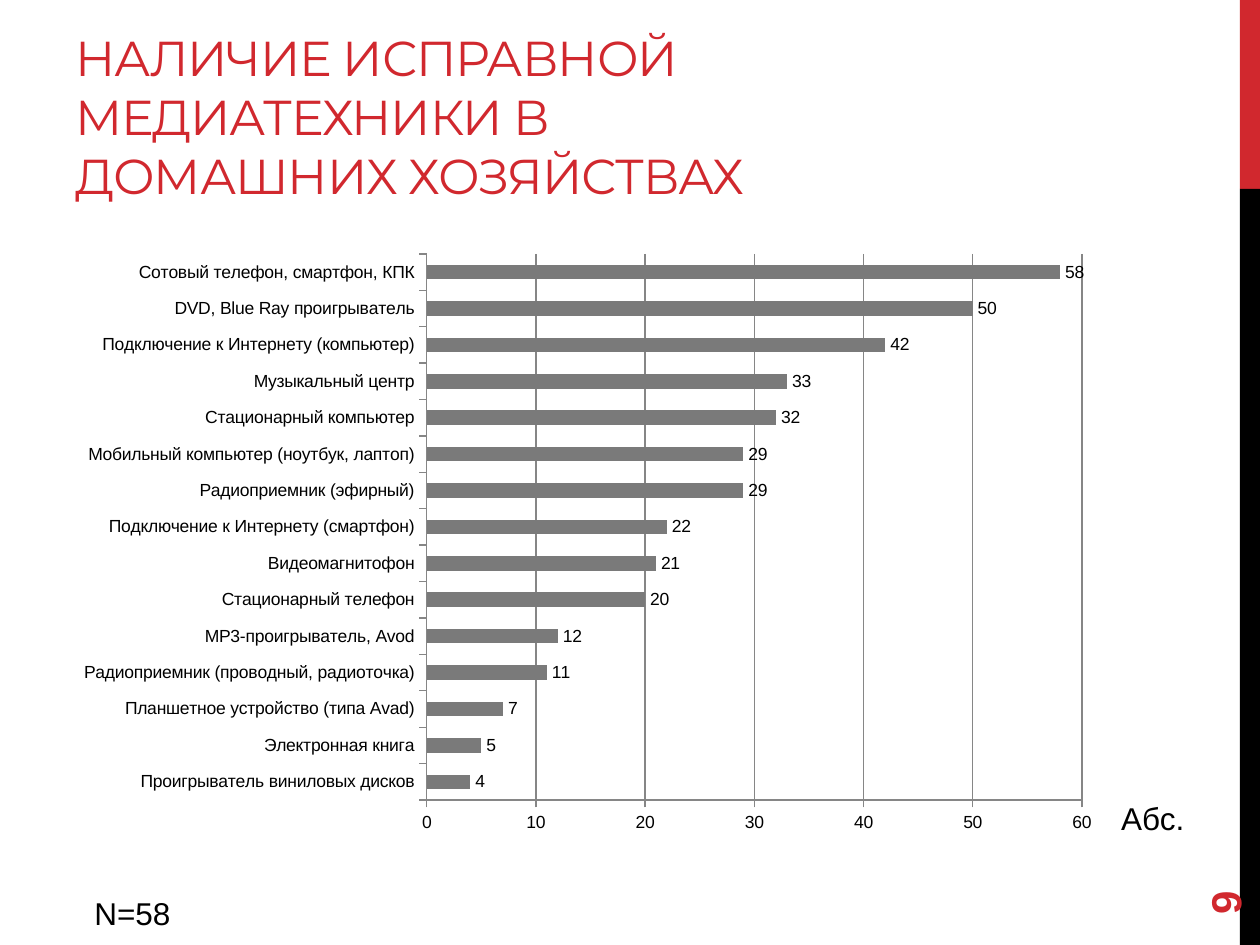
import pptx
import pptx.chart.data
import pptx.dml.color
import pptx.enum.chart
import pptx.enum.shapes
import pptx.enum.text
import pptx.util
from pptx.util import Inches

COLORS = {"red": "D1282E", "black": "000000", "bar": "7A7A7A", "grid": "868686"}


def rgb(name):
    return pptx.dml.color.RGBColor.from_string(COLORS[name])


def write(shape, text, size, color, face="Arial", bold=False):
    """Add one formatted run to the shape's first paragraph and return it."""
    paragraph = shape.text_frame.paragraphs[0]
    paragraph.alignment = pptx.enum.text.PP_ALIGN.LEFT
    run = paragraph.add_run()
    run.text = text
    run.font.size = pptx.util.Pt(size)
    run.font.name = face
    run.font.bold = bold
    run.font.color.rgb = rgb(color)
    return run


deck = pptx.Presentation()
deck.slide_width, deck.slide_height = Inches(10), Inches(7.5)
slide = deck.slides.add_slide(deck.slide_layouts[5])

# Side stripe
for top, height, color in [(0, 1.5, "red"), (1.5, 6, "black")]:
    stripe = slide.shapes.add_shape(
        pptx.enum.shapes.MSO_SHAPE.RECTANGLE,
        Inches(9.84), Inches(top), Inches(0.16), Inches(height))
    stripe.shadow.inherit = False
    stripe.fill.solid()
    stripe.fill.fore_color.rgb = rgb(color)
    stripe.line.fill.background()

# Title
title = slide.shapes.title
title.left, title.top = Inches(0.5), Inches(0.17)
title.width, title.height = Inches(6.33), Inches(1.5)
title.text_frame.word_wrap = True
title.text_frame.auto_size = pptx.enum.text.MSO_AUTO_SIZE.NONE
title.text_frame.vertical_anchor = pptx.enum.text.MSO_ANCHOR.BOTTOM
heading = write(title, "НАЛИЧИЕ ИСПРАВНОЙ МЕДИАТЕХНИКИ В ДОМАШНИХ ХОЗЯЙСТВАХ",
                28, "red", "Montserrat")
heading.font._element.set("spc", "-60")

# Chart
households = [
    ("Проигрыватель виниловых дисков", 4),
    ("Электронная книга", 5),
    ("Планшетное устройство (типа Avad)", 7),
    ("Радиоприемник (проводный, радиоточка)", 11),
    ("MP3-проигрыватель, Avod", 12),
    ("Стационарный телефон", 20),
    ("Видеомагнитофон", 21),
    ("Подключение к Интернету (смартфон)", 22),
    ("Радиоприемник (эфирный)", 29),
    ("Мобильный компьютер (ноутбук, лаптоп)", 29),
    ("Стационарный компьютер", 32),
    ("Музыкальный центр", 33),
    ("Подключение к Интернету (компьютер)", 42),
    ("DVD, Blue Ray проигрыватель", 50),
    ("Сотовый телефон, смартфон, КПК", 58),
]
chart_data = pptx.chart.data.CategoryChartData()
chart_data.categories = [device for device, count in households]
chart_data.add_series("Series 1", [count for device, count in households])
chart = slide.shapes.add_chart(
    pptx.enum.chart.XL_CHART_TYPE.BAR_CLUSTERED,
    Inches(0.5), Inches(1.92), Inches(8.33), Inches(4.78), chart_data).chart
chart.has_legend = False
chart.has_title = False
chart.font.size = pptx.util.Pt(10)
chart.font.name = "Arial"
chart.font.color.rgb = rgb("black")

bars = chart.plots[0]
bars.vary_by_categories = False
bars.gap_width = 150
bars.series[0].format.fill.solid()
bars.series[0].format.fill.fore_color.rgb = rgb("bar")
bars.has_data_labels = True
bars.data_labels.show_value = True
bars.data_labels.position = pptx.enum.chart.XL_LABEL_POSITION.OUTSIDE_END

counts = chart.value_axis
counts.minimum_scale, counts.maximum_scale, counts.major_unit = 0, 60, 10
counts.has_major_gridlines = True
for axis in (chart.category_axis, counts):
    axis.major_tick_mark = pptx.enum.chart.XL_TICK_MARK.OUTSIDE
    axis.minor_tick_mark = pptx.enum.chart.XL_TICK_MARK.NONE
for line in (chart.category_axis.format.line, counts.format.line,
             counts.major_gridlines.format.line):
    line.color.rgb = rgb("grid")
    line.width = pptx.util.Pt(0.75)

# Sample size and axis unit
for text, left, top, width in [("N=58", 0.65, 7.05, 0.81), ("Абс.", 8.8, 6.29, 0.72)]:
    note = slide.shapes.add_textbox(Inches(left), Inches(top), Inches(width), Inches(0.4))
    note.text_frame.word_wrap = False
    note.text_frame.auto_size = pptx.enum.text.MSO_AUTO_SIZE.SHAPE_TO_FIT_TEXT
    write(note, text, 18, "black")

# Page number, reading upwards beside the stripe
page_number = slide.shapes.add_textbox(Inches(9), Inches(6.44), Inches(1.44), Inches(0.4))
page_number.rotation = 270
page_number.text_frame.word_wrap = True
page_number.text_frame.vertical_anchor = pptx.enum.text.MSO_ANCHOR.MIDDLE
write(page_number, "9", 24, "red", bold=True)

deck.save("out.pptx")
